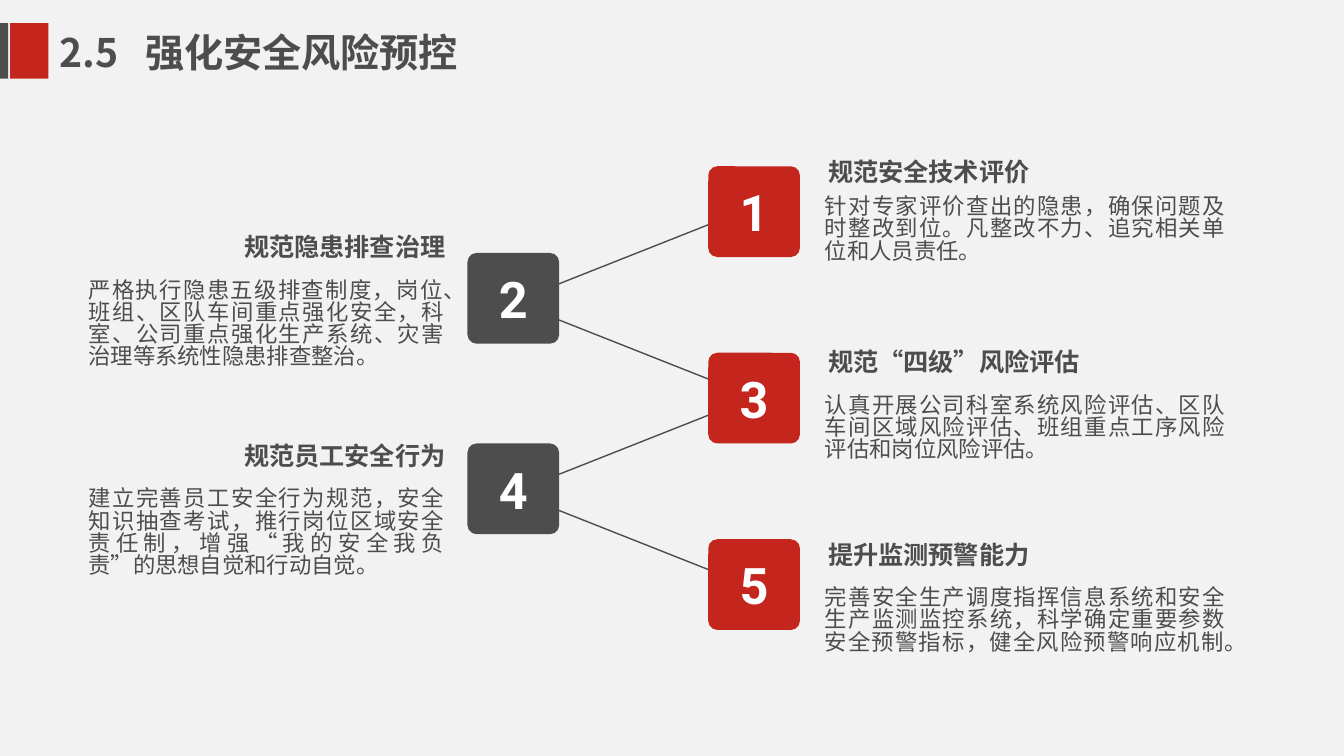
from lxml.etree import SubElement
from pptx import Presentation
from pptx.dml.color import RGBColor
from pptx.enum.shapes import MSO_CONNECTOR, MSO_SHAPE
from pptx.enum.text import MSO_ANCHOR, PP_ALIGN
from pptx.oxml.ns import qn
from pptx.util import Inches, Pt

UNIT = 0.1
COLS, ROWS = 133.4, 75
DARK, RED, WHITE, PAPER = "4D4D4D", "C4261D", "FFFFFF", "F2F2F2"
CJK, DIGITS = "Noto Sans CJK SC", "Roboto"
BOX_W, BOX_H = 9.1, 9
LEFT_COL, RIGHT_COL = 46.4, 70.3
LINK_TOP, LINK_STEP = 20.5, 9.45

STEPS = [
    (RIGHT_COL, 16.5, 15.2, 18.7, "规范安全技术评价",
     "针对专家评价查出的隐患，确保问题及时整改到位。凡整改不力、追究相关单位和人员责任。"),
    (LEFT_COL, 25.1, 22.7, 27, "规范隐患排查治理",
     "严格执行隐患五级排查制度，岗位、班组、区队车间重点强化安全，科室、公司重点强化生产系统、"
     "灾害治理等系统性隐患排查整治。"),
    (RIGHT_COL, 35, 34.1, 38.4, "规范“四级”风险评估",
     "认真开展公司科室系统风险评估、区队车间区域风险评估、班组重点工序风险评估和岗位风险评估。"),
    (LEFT_COL, 44, 43.4, 47.7, "规范员工安全行为",
     "建立完善员工安全行为规范，安全知识抽查考试，推行岗位区域安全责任制，"
     "增强“我的安全我负责”的思想自觉和行动自觉。"),
    (RIGHT_COL, 53.5, 53.2, 57.5, "提升监测预警能力",
     "完善安全生产调度指挥信息系统和安全生产监测监控系统，科学确定重要参数安全预警指标，"
     "健全风险预警响应机制。"),
]


def grid(*cells):
    return [Inches(c * UNIT) for c in cells]


def rgb(value):
    return RGBColor.from_string(value)


def write(tf, text, size, color=DARK, bold=False, align=PP_ALIGN.LEFT, font=CJK):
    tf.word_wrap = True
    tf.text = text
    p = tf.paragraphs[0]
    p.alignment = align
    for r in p.runs:
        r.font.size, r.font.bold, r.font.name = Pt(size), bold, font
        r.font.color.rgb = rgb(color)
        SubElement(r.font._element, qn("a:ea"), typeface=font)
    return p


def add_title(s, number, text):
    sp = s.shapes.title
    sp.left, sp.top, sp.width, sp.height = grid(4.9, 2.3, 48.4, 5.7)
    sp.text_frame.vertical_anchor = MSO_ANCHOR.MIDDLE
    p = write(sp.text_frame, f"{number}\t{text}", 28, bold=True)
    tabs = SubElement(p._p.get_or_add_pPr(), qn("a:tabLst"))
    SubElement(tabs, qn("a:tab"), pos=str(Inches(0.85)), algn="l")


def add_box(s, preset, cells, color):
    sp = s.shapes.add_shape(preset, *grid(*cells))
    sp.shadow.inherit = False
    sp.fill.solid()
    sp.fill.fore_color.rgb = rgb(color)
    sp.line.fill.background()
    return sp


def add_link(s, start, end):
    line = s.shapes.add_connector(MSO_CONNECTOR.STRAIGHT, *grid(*start, *end))
    line.line.color.rgb = rgb(DARK)
    line.line.width = Pt(1)
    SubElement(line._element.spPr, qn("a:effectLst"))


def add_number(s, col, row, number):
    color = RED if col == RIGHT_COL else DARK
    sp = add_box(s, MSO_SHAPE.ROUNDED_RECTANGLE, (col, row, BOX_W, BOX_H), color)
    sp.adjustments[0] = 0.1
    sp.text_frame.vertical_anchor = MSO_ANCHOR.MIDDLE
    write(sp.text_frame, str(number), 36, WHITE, True, PP_ALIGN.CENTER, DIGITS)


def add_text(s, cells, text, size, bold, align):
    tf = s.shapes.add_textbox(*grid(*cells)).text_frame
    tf.margin_top = Inches(0.08)
    write(tf, text, size, bold=bold, align=align).line_spacing = 0.83


def add_card(s, col, head_row, body_row, heading, body):
    if col == RIGHT_COL:
        head_col, head_w, align = 81.2, 31.9, PP_ALIGN.LEFT
        body_col, body_w, body_h = 80.9, 41.7, 9.1
    else:
        head_col, head_w, align = 12.4, 32.8, PP_ALIGN.RIGHT
        body_col, body_w, body_h = 7.8, 37.3, 11.8
    add_text(s, (head_col, head_row, head_w, 4), heading, 18, True, align)
    add_text(s, (body_col, body_row, body_w, body_h), body, 16, False, PP_ALIGN.JUSTIFY)


def main():
    prs = Presentation()
    prs.slide_width, prs.slide_height = grid(COLS, ROWS)
    s = prs.slides.add_slide(prs.slide_layouts[5])
    s.background.fill.solid()
    s.background.fill.fore_color.rgb = rgb(PAPER)

    add_title(s, "2.5", "强化安全风险预控")
    add_box(s, MSO_SHAPE.RECTANGLE, (0, 2.3, 0.8, 5.5), DARK)
    add_box(s, MSO_SHAPE.RECTANGLE, (1, 2.3, 3.8, 5.5), RED)

    joints = [(step[0] + BOX_W / 2, LINK_TOP + i * LINK_STEP)
              for i, step in enumerate(STEPS)]
    for start, end in zip(joints, joints[1:]):
        add_link(s, start, end)
    for number, (col, row, *card) in enumerate(STEPS, 1):
        add_number(s, col, row, number)
        add_card(s, col, *card)
    prs.save("out.pptx")


if __name__ == "__main__":
    main()
